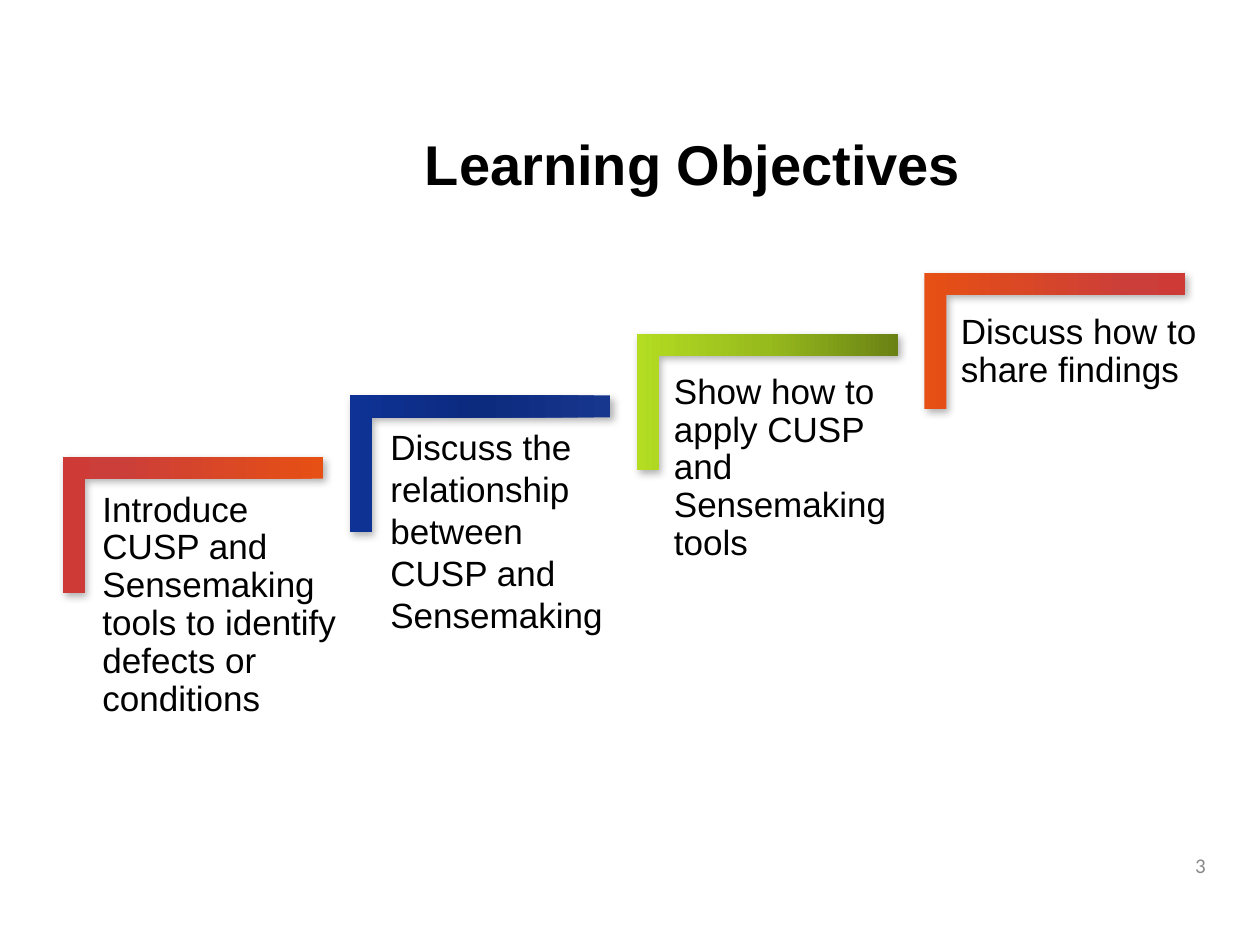
"""Build the Learning Objectives slide: four ascending steps, each with a corner bracket."""
from copy import deepcopy
from dataclasses import dataclass

from lxml import etree
from pptx import Presentation, dml, util as u
from pptx.dml import color
from pptx.enum import shapes, text
from pptx.oxml import ns

Pt = u.Pt
ALIGN, ANCHOR = text.PP_ALIGN, text.MSO_ANCHOR
BRACKET_WIDTH, BRACKET_HEIGHT = 149, 77.8
FIRST_CENTER_X, FIRST_CENTER_Y = 110.2, 299.9
STEP_X, STEP_Y = 164.15, 35.05


@dataclass
class Label:
    wording: str
    left: float
    top: float
    width: float
    height: float
    inset_x: float = 7.2
    inset_y: float = 3.6
    line_spacing: float = 1.0
    size: float = 20
    font: str = "Arial"
    ink: str = "000000"
    bold: bool = False
    align: ALIGN = ALIGN.LEFT
    anchor: ANCHOR = ANCHOR.TOP


@dataclass
class Step:
    label: Label
    stops: tuple[tuple[float, str], ...]
    angle: int = 270


EMBER = ((0, "E65014"), (0.8, "CB3E3A"), (1, "CE3B37"))
NAVY = ((0, "17368D"), (0.5, "0C2A7E"), (1, "0E3296"))
LIME = ((0, "6A8214"), (0.5, "97BA1D"), (1, "B3DC22"))

STEPS = [
    Step(Label("Introduce CUSP and Sensemaking tools to identify defects or conditions",
               53.3, 275.8, 145, 223, 5.25, 5.25, 0.9), EMBER),
    Step(Label("Discuss the relationship between CUSP and Sensemaking",
               216, 239.8, 144, 128), NAVY),
    Step(Label("Show how to apply CUSP and Sensemaking tools",
               378, 210.2, 138.2, 117, line_spacing=0.9), LIME),
    Step(Label("Discuss how to share findings",
               543.8, 174.2, 158.4, 144, 5.25, 5.25, 0.9), EMBER, 90),
]
TITLE = Label("Learning Objectives", 108, 48, 576, 90, size=32, bold=True,
              align=ALIGN.CENTER, anchor=ANCHOR.MIDDLE)
PAGE_NUMBER = Label("3", 528, 480, 168, 28.8, size=12, font="Calibri", ink="898989",
                    align=ALIGN.RIGHT, anchor=ANCHOR.MIDDLE)


def rgb(code: str) -> color.RGBColor:
    return color.RGBColor.from_string(code)


def add_label(slide, label: Label) -> None:
    box = slide.shapes.add_textbox(Pt(label.left), Pt(label.top), Pt(label.width), Pt(label.height))
    frame = box.text_frame
    frame.word_wrap = True
    frame.vertical_anchor = label.anchor
    frame.margin_left = frame.margin_right = Pt(label.inset_x)
    frame.margin_top = frame.margin_bottom = Pt(label.inset_y)
    wording = frame.paragraphs[0]
    wording.text = label.wording
    wording.alignment = label.align
    wording.line_spacing = label.line_spacing
    wording.font.name = label.font
    wording.font.size = Pt(label.size)
    wording.font.bold = label.bold
    wording.font.color.rgb = rgb(label.ink)


def add_shadow(bracket) -> None:
    bracket.shadow.inherit = False
    effects = bracket.element.spPr.find(ns.qn("a:effectLst"))
    shadow = etree.SubElement(effects, ns.qn("a:outerShdw"), blurRad=str(Pt(4.5)),
                              dist=str(Pt(2.6)), dir=str(53 * 60000), rotWithShape="0")
    ink = etree.SubElement(shadow, ns.qn("a:srgbClr"), val="000000")
    etree.SubElement(ink, ns.qn("a:alpha"), val="30000")


def add_bracket(slide, step: Step, index: int) -> None:
    center_x = FIRST_CENTER_X + index * STEP_X
    center_y = FIRST_CENTER_Y - index * STEP_Y
    bracket = slide.shapes.add_shape(
        shapes.MSO_SHAPE.CORNER, Pt(center_x - BRACKET_HEIGHT / 2),
        Pt(center_y - BRACKET_WIDTH / 2), Pt(BRACKET_HEIGHT), Pt(BRACKET_WIDTH))
    bracket.rotation = 90
    bracket.adjustments[0] = bracket.adjustments[1] = 0.161
    bracket.line.fill.background()
    bracket.fill.gradient()
    bracket.fill.gradient_angle = step.angle
    stop_list = bracket.element.spPr.find(".//" + ns.qn("a:gsLst"))
    stop_list.append(deepcopy(stop_list[0]))
    for stop, (position, code) in zip(bracket.fill.gradient_stops, step.stops):
        stop.position = position
        stop.color.rgb = rgb(code)
    add_shadow(bracket)


def main() -> None:
    deck = Presentation()
    deck.slide_width, deck.slide_height = Pt(720), Pt(540)
    slide = deck.slides.add_slide(deck.slide_layouts[6])
    add_label(slide, PAGE_NUMBER)
    add_label(slide, TITLE)
    for index, step in enumerate(STEPS):
        add_bracket(slide, step, index)
        add_label(slide, step.label)
    deck.save("out.pptx")


if __name__ == "__main__":
    main()
